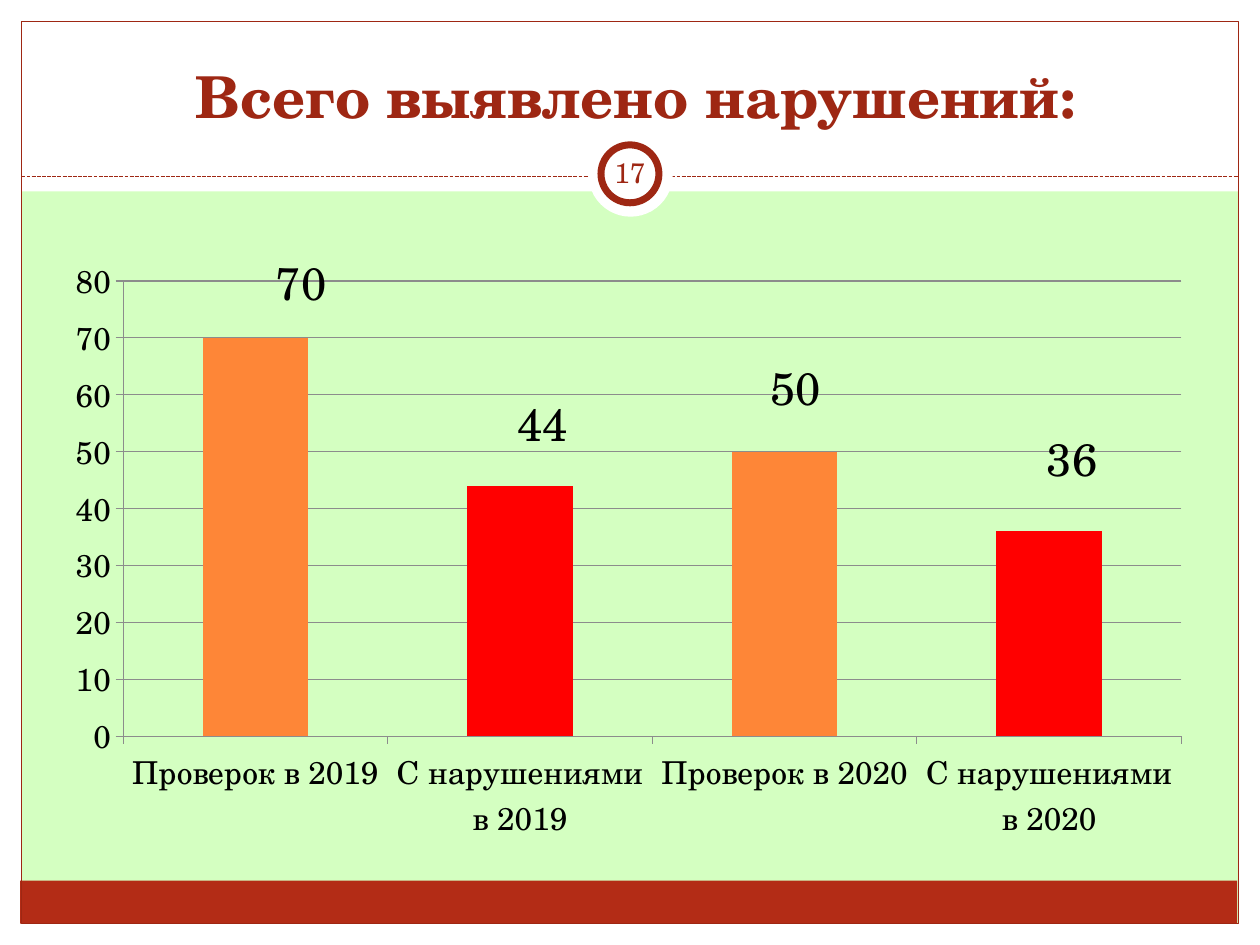
from lxml.etree import SubElement
from pptx import Presentation
from pptx.chart.data import CategoryChartData
from pptx.dml.color import RGBColor
from pptx.enum.chart import XL_CHART_TYPE, XL_LABEL_POSITION, XL_TICK_MARK
from pptx.enum.dml import MSO_LINE
from pptx.enum.shapes import MSO_CONNECTOR, MSO_SHAPE
from pptx.enum.text import MSO_ANCHOR, PP_ALIGN
from pptx.oxml.ns import qn
from pptx.util import Inches, Pt

WHITE = RGBColor(0xFF, 0xFF, 0xFF)
BLACK = RGBColor(0, 0, 0)
MINT = RGBColor(0xD4, 0xFF, 0xC1)
BRICK = RGBColor(0xB3, 0x2C, 0x16)
DARK_RED = RGBColor(0x9E, 0x27, 0x13)
ORANGE = RGBColor(0xFE, 0x86, 0x37)
RED = RGBColor(0xFF, 0, 0)
GREY = RGBColor(0x8C, 0x8C, 0x8C)
FONT = "TeX Gyre Schola"
C15 = "http://schemas.microsoft.com/office/drawing/2012/chart"
LABEL_EXTENSION = "{CE6537A1-D6FC-4f65-9D91-7224C49458BB}"


def set_attributes(target, values):
    for name, value in values.items():
        setattr(target, name, value)


def set_layout(parent, index, values):
    """Place a chart part by a manual layout."""
    for old in parent.findall(qn("c:layout")):
        parent.remove(old)
    layout = SubElement(parent, qn("c:layout"))
    manual = SubElement(layout, qn("c:manualLayout"))
    for tag, value in values.items():
        SubElement(manual, qn(f"c:{tag}")).set("val", str(value))
    parent.insert(index, layout)


def hide_leader_lines(labels):
    """Switch off the lines from shifted labels to their bars."""
    for leader in labels.findall(qn("c:showLeaderLines")):
        leader.set("val", "0")
    extensions = SubElement(labels, qn("c:extLst"))
    extension = SubElement(extensions, qn("c:ext"), nsmap={"c15": C15})
    extension.set("uri", LABEL_EXTENSION)
    SubElement(extension, f"{{{C15}}}showLeaderLines").set("val", "0")


class SlideBuilder:
    def __init__(self, slide, font):
        self.slide = slide
        self.font = font

    def style_font(self, font, size, color, bold=False):
        set_attributes(font, {"name": self.font, "size": Pt(size), "bold": bold})
        font.color.rgb = color

    def style_line(self, line, color, width):
        line.color.rgb = color
        line.width = Pt(width)

    def shape(self, kind, box, fill=None, line=None, width=0.75):
        shape = self.slide.shapes.add_shape(kind, *map(Inches, box))
        shape.shadow.inherit = False
        if fill is None:
            shape.fill.background()
        else:
            shape.fill.solid()
            shape.fill.fore_color.rgb = fill
        if line is None:
            shape.line.fill.background()
        else:
            self.style_line(shape.line, line, width)

    def dashed_line(self, start, end, color, width):
        rule = self.slide.shapes.add_connector(
            MSO_CONNECTOR.STRAIGHT, *map(Inches, start + end))
        self.style_line(rule.line, color, width)
        rule.line.dash_style = MSO_LINE.SQUARE_DOT
        properties = rule.element.find(qn("p:spPr"))
        SubElement(properties, qn("a:effectLst"))

    def text(self, box, words, size, color, anchor, bold=False, inset=(0.1, 0.05)):
        frame = self.slide.shapes.add_textbox(*map(Inches, box)).text_frame
        side, end = map(Inches, inset)
        set_attributes(frame, {
            "word_wrap": True, "vertical_anchor": anchor,
            "margin_left": side, "margin_right": side,
            "margin_top": end, "margin_bottom": end,
        })
        paragraph = frame.paragraphs[0]
        paragraph.alignment = PP_ALIGN.CENTER
        run = paragraph.add_run()
        run.text = words
        self.style_font(run.font, size, color, bold)

    def column_chart(self, box, bars, plot_layout):
        """Each bar is (category, value, colour, label offset)."""
        data = CategoryChartData()
        data.categories = [bar[0] for bar in bars]
        data.add_series("Series 1", [bar[1] for bar in bars])
        chart = self.slide.shapes.add_chart(
            XL_CHART_TYPE.COLUMN_STACKED, *map(Inches, box), data).chart
        set_attributes(chart, {"has_legend": False, "has_title": False})
        self.style_font(chart.font, 18, BLACK)

        plot = chart.plots[0]
        set_attributes(plot, {
            "gap_width": 150, "overlap": 100, "vary_by_categories": False})
        set_attributes(chart.value_axis, {
            "minimum_scale": 0, "maximum_scale": 80, "major_unit": 10,
            "has_major_gridlines": True})
        for axis in (chart.category_axis, chart.value_axis):
            axis.major_tick_mark = XL_TICK_MARK.OUTSIDE
            self.style_line(axis.format.line, GREY, 0.75)
        self.style_line(chart.value_axis.major_gridlines.format.line, GREY, 0.75)

        series = plot.series[0]
        series.format.fill.solid()
        series.format.fill.fore_color.rgb = bars[0][2]
        for index, (_, _, color, _) in enumerate(bars):
            point = series.points[index]
            point.format.fill.solid()
            point.format.fill.fore_color.rgb = color
            self.style_font(point.data_label.font, 26, BLACK)
            point.data_label.position = XL_LABEL_POSITION.CENTER

        # Plot area and shifted value labels
        set_layout(next(chart.element.iter(qn("c:plotArea"))), 0, plot_layout)
        labels = list(chart.element.iter(qn("c:dLbl")))
        for label, (_, _, _, (x, y)) in zip(labels, bars):
            set_layout(label, 1, {"x": x, "y": y})
        hide_leader_lines(next(chart.element.iter(qn("c:dLbls"))))


def main():
    deck = Presentation()
    deck.slide_width, deck.slide_height = Inches(10), Inches(7.5)
    slide = deck.slides.add_slide(deck.slide_layouts[6])
    slide.background.fill.solid()
    slide.background.fill.fore_color.rgb = MINT
    page = SlideBuilder(slide, FONT)

    # White margins and header
    for margin in ((0, 7.33, 10, 0.17), (0, 0, 10, 1.52),
                   (0, 0, 0.17, 7.5), (9.83, 0, 0.17, 7.5)):
        page.shape(MSO_SHAPE.RECTANGLE, margin, WHITE)

    # Footer band, frame and header rule
    page.shape(MSO_SHAPE.RECTANGLE, (0.16, 6.99, 9.66, 0.34), BRICK)
    page.shape(MSO_SHAPE.RECTANGLE, (0.17, 0.17, 9.66, 7.16), line=DARK_RED)
    page.dashed_line((0.17, 1.4), (9.83, 1.4), DARK_RED, 0.75)

    # Page number badge
    page.shape(MSO_SHAPE.OVAL, (4.67, 1.05, 0.67, 0.67), WHITE)
    page.shape(MSO_SHAPE.OVAL, (4.77, 1.15, 0.46, 0.46), WHITE, DARK_RED, 4)

    # Inspections and violations by year
    bars = [
        ("Проверок в 2019", 70, ORANGE, (0.04, -0.42)),
        ("C нарушениями в 2019", 44, RED, (0.02, -0.31)),
        ("Проверок в 2020", 50, ORANGE, (0.01, -0.34)),
        ("С нарушениями в 2020", 36, RED, (0.02, -0.29)),
    ]
    page.column_chart((0.43, 1.94, 9.13, 4.82), bars, {
        "layoutTarget": "inner", "xMode": "edge", "yMode": "edge",
        "x": 0.06, "y": 0.06, "w": 0.92, "h": 0.75})

    # Title and page number
    page.text((0.28, 0.21, 9.53, 0.87), "Всего выявлено нарушений:",
              33, DARK_RED, MSO_ANCHOR.BOTTOM, bold=True)
    page.text((4.75, 1.13, 0.5, 0.48), "17", 16, DARK_RED,
              MSO_ANCHOR.MIDDLE, inset=(0.05, 0.05))

    deck.save("out.pptx")


if __name__ == "__main__":
    main()
